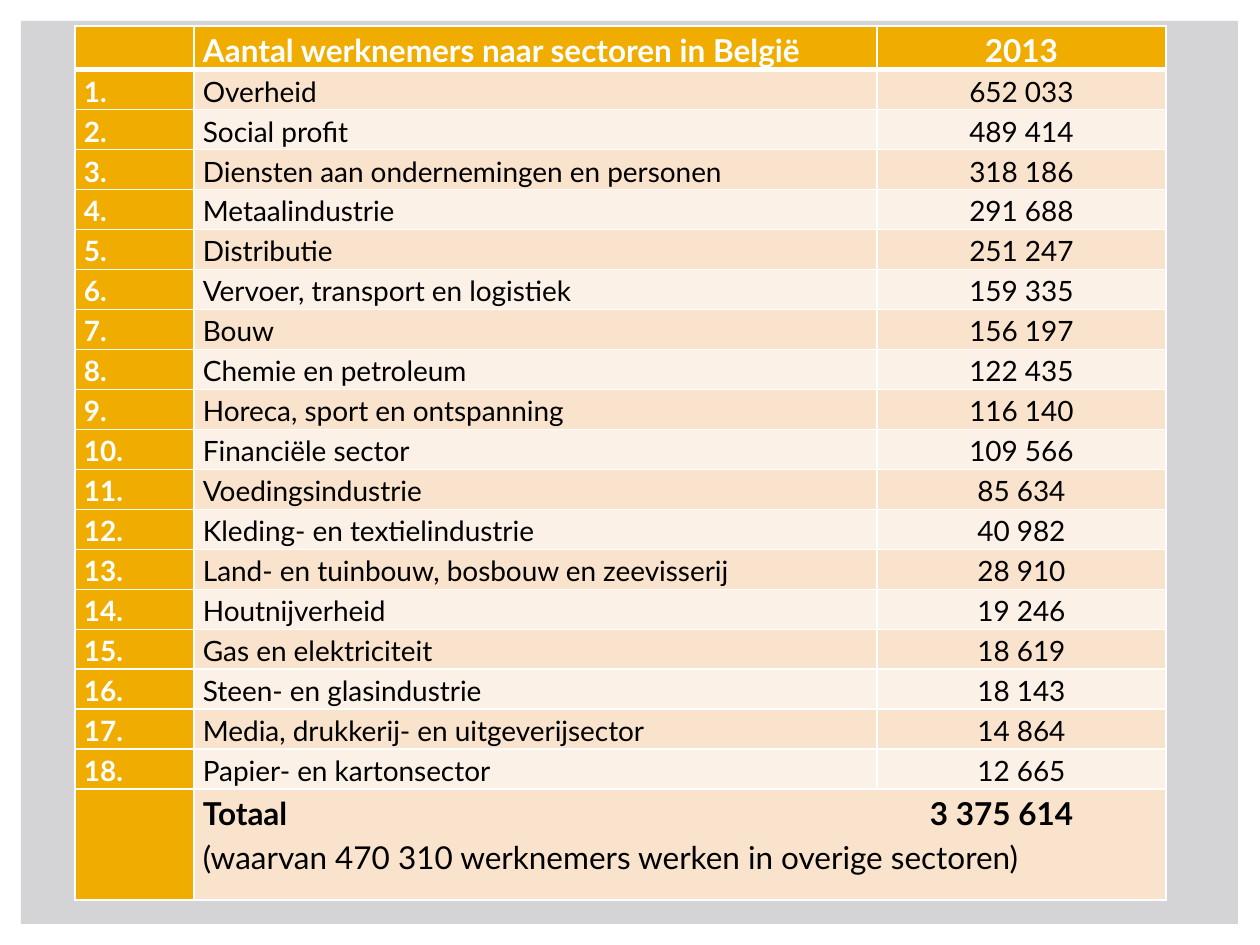
from lxml import etree
from pptx import Presentation
from pptx import util as u
from pptx.dml.color import RGBColor
from pptx.enum import shapes, text
from pptx.oxml.ns import qn

PX = 914400 // 126  # one px in EMU
THEME = {
    "font": "Lato", "big": 18, "body": 16, "spacing": 1.15,
    "panel": "D4D4D6", "accent": "F0AD00", "bands": ("F9E3CC", "FCF1E7"),
    "light": "FFFFFF", "dark": "000000",
}
LEFT, CENTER = text.PP_ALIGN.LEFT, text.PP_ALIGN.CENTER

SECTORS = [
    ("Overheid", "652 033"),
    ("Social profit", "489 414"),
    ("Diensten aan ondernemingen en personen", "318 186"),
    ("Metaalindustrie", "291 688"),
    ("Distributie", "251 247"),
    ("Vervoer, transport en logistiek", "159 335"),
    ("Bouw", "156 197"),
    ("Chemie en petroleum", "122 435"),
    ("Horeca, sport en ontspanning", "116 140"),
    ("Financiële sector", "109 566"),
    ("Voedingsindustrie", "85 634"),
    ("Kleding- en textielindustrie", "40 982"),
    ("Land- en tuinbouw, bosbouw en zeevisserij", "28 910"),
    ("Houtnijverheid", "19 246"),
    ("Gas en elektriciteit", "18 619"),
    ("Steen- en glasindustrie", "18 143"),
    ("Media, drukkerij- en uitgeverijsector", "14 864"),
    ("Papier- en kartonsector", "12 665"),
]


def write(p, words, size=THEME["body"], color=THEME["dark"], bold=False, align=LEFT):
    p.alignment = align
    p.line_spacing = THEME["spacing"]
    r = p.add_run()
    r.text = words
    r.font.name = THEME["font"]
    r.font.size = u.Pt(size)
    r.font.bold = bold
    r.font.color.rgb = RGBColor.from_string(color)


def style_cell(cell, fill, top=1, bottom=1):
    cell.margin_left = cell.margin_right = 9 * PX
    cell.margin_top = cell.margin_bottom = 0
    tc_pr = cell._tc.get_or_add_tcPr()
    for side, width in (("L", 1), ("R", 1), ("T", top), ("B", bottom)):
        ln = etree.SubElement(tc_pr, qn("a:ln" + side), w=str(u.Pt(width)))
        solid = etree.SubElement(ln, qn("a:solidFill"))
        etree.SubElement(solid, qn("a:srgbClr"), val=THEME["light"])
    cell.fill.solid()
    cell.fill.fore_color.rgb = RGBColor.from_string(fill)


prs = Presentation()
prs.slide_width, prs.slide_height = u.Inches(10), u.Inches(7.5)
s = prs.slides.add_slide(prs.slide_layouts[6])

# Grey panel
sp = s.shapes.add_shape(shapes.MSO_SHAPE.RECTANGLE, 21 * PX, 21 * PX, 1217 * PX, 903 * PX)
sp.shadow.inherit = False
sp.fill.solid()
sp.fill.fore_color.rgb = RGBColor.from_string(THEME["panel"])
sp.line.fill.background()

# Table grid
last = len(SECTORS) + 1
frame = s.shapes.add_table(last + 1, 3, 75 * PX, 26 * PX, 1091 * PX, 877 * PX)
table = frame.table
for col, width in zip(table.columns, (119, 683, 289)):
    col.width = width * PX
for row in table.rows:
    row.height = 40 * PX
table.rows[last].height = 111 * PX

# Cell fills and borders
for i in range(last + 1):
    for j in range(3):
        fill = THEME["accent"] if i == 0 or j == 0 else THEME["bands"][(i - 1) % 2]
        style_cell(table.cell(i, j), fill, top=3 if i == 1 else 1, bottom=3 if i == 0 else 1)

# Header
head = dict(size=THEME["big"], color=THEME["light"], bold=True)
write(table.cell(0, 1).text_frame.paragraphs[0], "Aantal werknemers naar sectoren in België", **head)
write(table.cell(0, 2).text_frame.paragraphs[0], "2013", align=CENTER, **head)

# Numbered sectors
for i, (sector, workers) in enumerate(SECTORS, 1):
    number, name, count = (table.cell(i, j).text_frame.paragraphs[0] for j in range(3))
    write(number, f"{i}.", color=THEME["light"], bold=True)
    write(name, sector)
    write(count, workers, align=CENTER)

# Total, with its figure on a tab stop
total = table.cell(last, 1)
total.merge(table.cell(last, 2))
tf = total.text_frame
p = tf.paragraphs[0]
write(p, "Totaal\t3 375 614", size=THEME["big"], bold=True)
tabs = etree.SubElement(p._p.get_or_add_pPr(), qn("a:tabLst"))
etree.SubElement(tabs, qn("a:tab"), pos=str(727 * PX), algn="l")
write(tf.add_paragraph(), "(waarvan 470 310 werknemers werken in overige sectoren)", size=THEME["big"])

prs.save("out.pptx")
